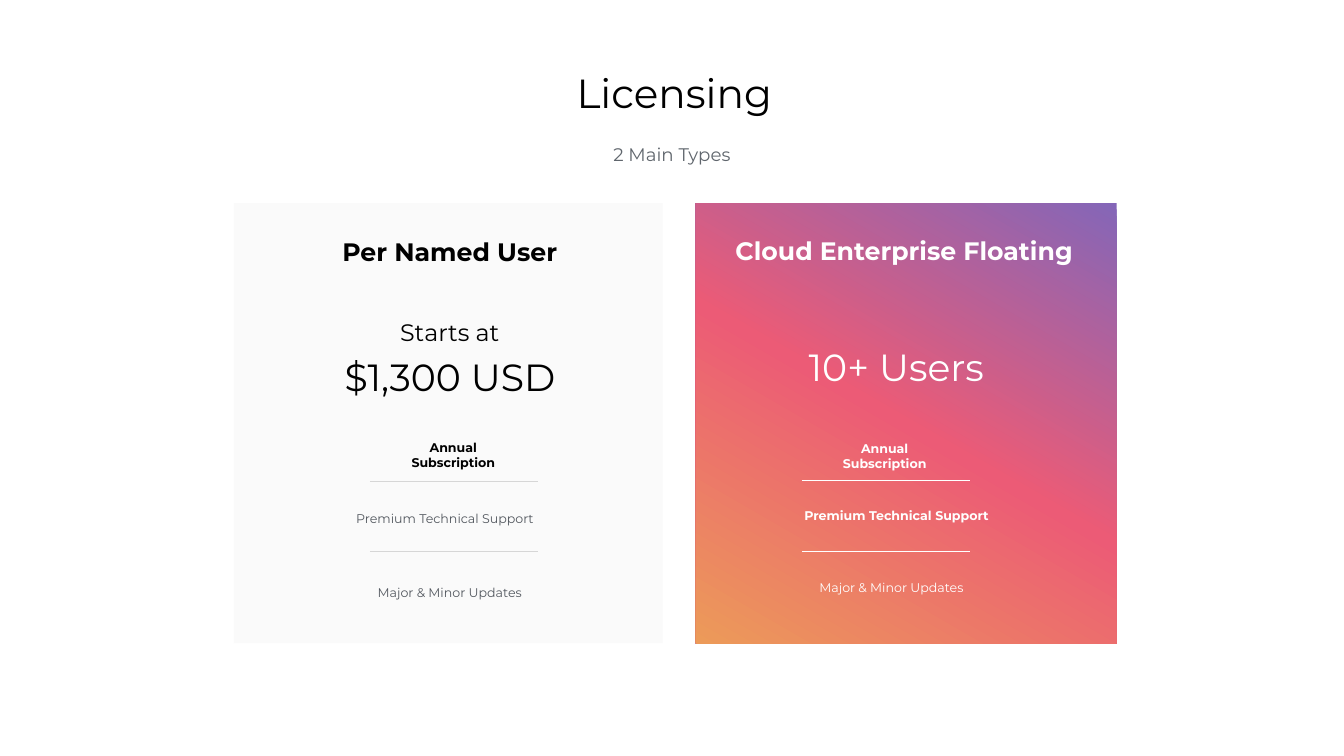
"""Build the licensing slide with its two plan cards."""
from copy import deepcopy

from pptx import Presentation
from pptx.dml.color import RGBColor
from pptx.enum.shapes import MSO_CONNECTOR, MSO_SHAPE
from pptx.enum.text import MSO_ANCHOR, PP_ALIGN
from pptx.oxml.ns import qn
from pptx.util import Emu, Pt

PX = 9144
FONT = "Montserrat"
BLACK, WHITE, GREY = "000000", "FFFFFF", "53585F"


def rgb(value):
    return RGBColor.from_string(value)


def add_text(text, *, box, size, color=BLACK, bold=False, spacing=1.0, anchor=MSO_ANCHOR.MIDDLE):
    frame = slide.shapes.add_textbox(*[Emu(n * PX) for n in box]).text_frame
    frame.word_wrap = True
    frame.vertical_anchor = anchor
    frame.margin_left = frame.margin_right = frame.margin_top = frame.margin_bottom = Emu(6 * PX)
    paragraph = frame.paragraphs[0]
    paragraph.alignment = PP_ALIGN.CENTER
    paragraph.line_spacing = spacing
    run = paragraph.add_run()
    run.text = text
    run.font.name = FONT
    run.font.size = Pt(size)
    run.font.bold = bold
    run.font.color.rgb = rgb(color)


prs = Presentation()
prs.slide_width, prs.slide_height = Emu(2667 * PX), Emu(1500 * PX)
slide = prs.slides.add_slide(prs.slide_layouts[6])

add_text("Licensing", box=(761, 129, 1154, 107), size=58)
add_text("2 Main Types", box=(500, 269, 1667, 68), size=26, color="60666D", spacing=1.2,
         anchor=MSO_ANCHOR.TOP)

cards = []
for left, width in ((464, 851), (1381, 835)):
    card = slide.shapes.add_shape(
        MSO_SHAPE.RECTANGLE, *[Emu(n * PX) for n in (left, 403, width, 873)])
    card.shadow.inherit = False
    card.line.fill.background()
    cards.append(card)
named_card, cloud_card = cards

named_card.fill.solid()
named_card.fill.fore_color.rgb = rgb("FAFAFA")

cloud_card.fill.gradient()
cloud_card.fill.gradient_angle = 240
stop_list = cloud_card.fill._xPr.find(qn("a:gradFill")).find(qn("a:gsLst"))
stop_list.append(deepcopy(stop_list[0]))
gradient = ((0, "8466B8"), (0.5, "EC5B76"), (1, "EC9A59"))
for stop, (position, color) in zip(cloud_card.fill.gradient_stops, gradient):
    stop.position = position
    stop.color.rgb = rgb(color)

add_text("Per Named User", box=(534, 461, 717, 75), size=36, bold=True)
add_text("Starts at", box=(776, 625, 233, 68), size=34)
add_text("$1,300 USD", box=(639, 663, 508, 168), size=54)
add_text("Annual Subscription", box=(809, 878, 181, 51), size=18, bold=True)
add_text("Premium Technical Support", box=(642, 974, 482, 95), size=18, color=GREY, spacing=1.5)
add_text("Major & Minor Updates", box=(681, 1146, 423, 44), size=18, color=GREY, spacing=1.5)

add_text("Cloud Enterprise Floating", box=(1422, 460, 744, 75), size=36, color=WHITE, bold=True)
add_text("10+ Users", box=(1508, 667, 541, 120), size=54, color=WHITE)
add_text("Annual Subscription", box=(1653, 879, 205, 51), size=18, color=WHITE, bold=True)
add_text("Premium Technical Support", box=(1558, 977, 442, 92), size=18, color=WHITE, bold=True)
add_text("Major & Minor Updates", box=(1558, 1107, 422, 104), size=18, color=WHITE, spacing=1.5)

for left, top, color in ((734, 955, "D6D6D6"), (1591, 954, WHITE)):
    for y in (top, top + 139):
        divider = slide.shapes.add_connector(
            MSO_CONNECTOR.STRAIGHT, *[Emu(n * PX) for n in (left, y, left + 334, y)])
        divider.line.color.rgb = rgb(color)
        divider.line.width = Pt(1)
        properties = divider._element.spPr
        properties.append(properties.makeelement(qn("a:effectLst"), {}))

prs.save("out.pptx")
